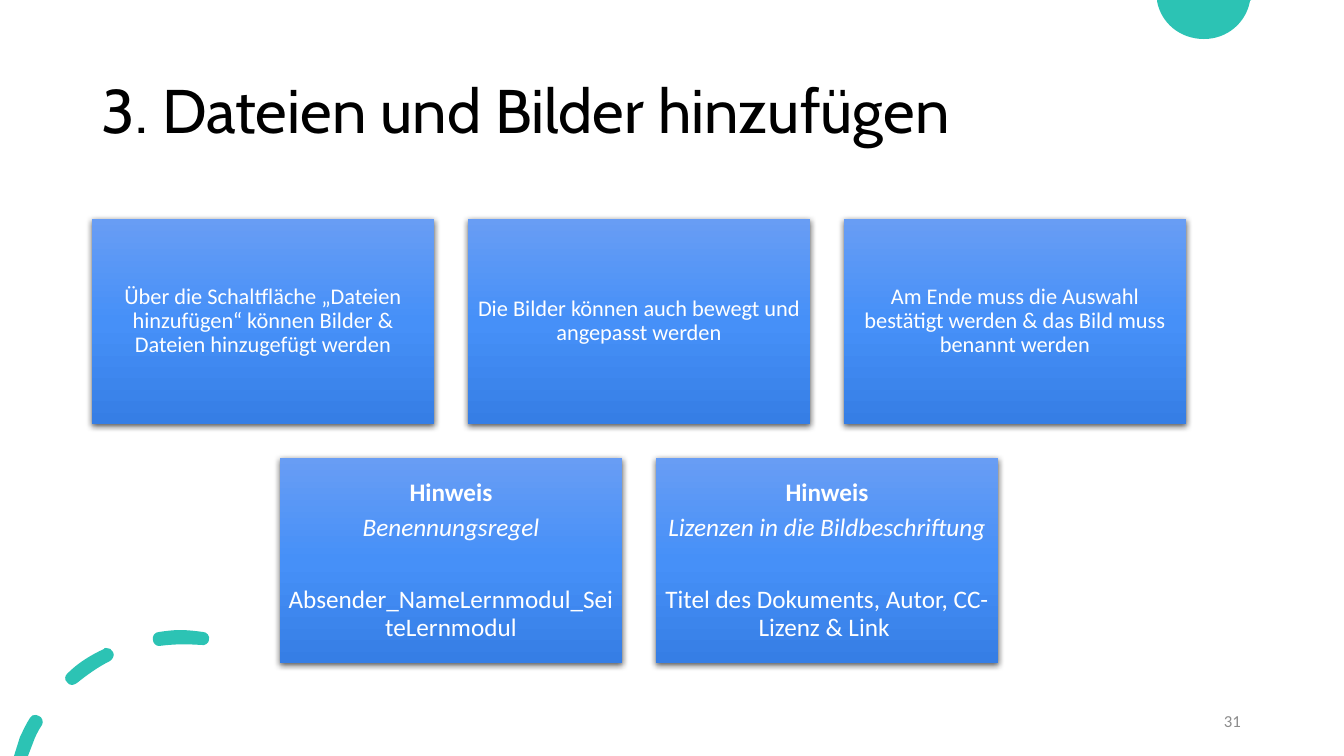
from dataclasses import dataclass

from pptx import Presentation
from pptx import util as u
from pptx.dml.color import RGBColor
from pptx.enum import shapes, text
from pptx.oxml import parse_xml
from pptx.oxml.ns import nsdecls, qn

PX = 12192000 / 1344


@dataclass(frozen=True)
class Theme:
    accent: str = "2CC3B4"
    card_gradient: tuple = ((0, "689DF4"), (50, "4690F8"), (100, "367EE5"))
    shadow: str = "000000"
    title: str = "000000"
    card_text: str = "FFFFFF"
    number: str = "8C8C8C"
    heading_font: str = "Cabin"
    body_font: str = "Calibri"
    title_size: int = 44
    hint_size: int = 18
    step_size: int = 16
    number_size: int = 12


THEME = Theme()

CARD_W, CARD_H, CARD_GAP = 342, 205, 34
CARDS_LEFT, CARDS_TOP = 92, 219

STEPS = [
    "Über die Schaltfläche „Dateien hinzufügen“ können Bilder & Dateien hinzugefügt werden",
    "Die Bilder können auch bewegt und angepasst werden",
    "Am Ende muss die Auswahl bestätigt werden & das Bild muss benannt werden",
]
HINTS = [
    ("Benennungsregel", "Absender_NameLernmodul_SeiteLernmodul"),
    ("Lizenzen in die Bildbeschriftung", "Titel des Dokuments, Autor, CC- Lizenz & Link "),
]

HALF_DISC = [[
    (1157, 0), (1251, 0), (1250, 1),
    (1246, 23, 1227, 39, 1204, 39), (1180, 39, 1161, 23, 1157, 1),
]]
ARC_DASHES = [
    [
        (36, 715), (34, 714, 31, 716, 30, 718), (26, 724, 23, 731, 20, 737),
        (14, 756), (28, 756), (33, 743), (35, 737, 38, 731, 42, 725),
        (44, 722, 42, 717, 39, 716), (38, 715, 37, 715, 36, 715),
    ],
    [
        (106, 648), (105, 648, 104, 648, 104, 649), (91, 655, 78, 663, 68, 673),
        (65, 675, 64, 680, 67, 682), (68, 684, 70, 685, 72, 685),
        (74, 685, 75, 684, 77, 683), (87, 675, 98, 667, 110, 661),
        (113, 659, 115, 655, 113, 652), (112, 649, 109, 648, 106, 648),
    ],
    [
        (180, 630), (173, 630, 166, 631, 159, 632), (155, 632, 152, 636, 153, 640),
        (153, 643, 156, 646, 159, 646), (174, 644, 187, 644, 201, 645),
        (205, 646, 209, 643, 209, 640), (210, 636, 207, 632, 203, 632),
        (196, 631, 187, 630, 180, 630),
    ],
]


def px(length):
    return u.Emu(round(length * PX))


def bend_segments(ornament, outlines):
    steps = [step for outline in outlines for step in outline[1:]]
    segments = list(ornament._element.iter(qn("a:lnTo")))
    for segment, step in zip(segments, steps):
        if len(step) == 2:
            continue
        points = "".join(f'<a:pt x="{px(x) - ornament.left}" y="{px(y) - ornament.top}"/>'
                         for x, y in zip(step[::2], step[1::2]))
        curve = parse_xml(f'<a:cubicBezTo {nsdecls("a")}>{points}</a:cubicBezTo>')
        segment.getparent().replace(segment, curve)


def add_ornament(slide, outlines):
    contours = [[(px(step[-2]), px(step[-1])) for step in outline] for outline in outlines]
    builder = slide.shapes.build_freeform(*contours[0][0])
    for index, contour in enumerate(contours):
        if index:
            builder.move_to(*contour[0])
        builder.add_line_segments(contour[1:], close=True)
    ornament = builder.convert_to_shape()
    bend_segments(ornament, outlines)
    ornament.shadow.inherit = False
    ornament.fill.solid()
    ornament.fill.fore_color.rgb = RGBColor.from_string(THEME.accent)
    ornament.line.fill.background()


def write(paragraph, words, *, size, color, font=THEME.body_font, bold=False, italic=False,
          align=text.PP_ALIGN.LEFT, line_spacing=0.9, after=0):
    paragraph.alignment = align
    paragraph.line_spacing = line_spacing
    paragraph.space_after = u.Pt(after)
    run = paragraph.add_run()
    run.text = words
    run.font.name = font
    run.font.size = u.Pt(size)
    run.font.bold = bold
    run.font.italic = italic
    run.font.color.rgb = RGBColor.from_string(color)


def prepare_frame(shape, inset):
    frame = shape.text_frame
    frame.word_wrap = True
    frame.vertical_anchor = text.MSO_ANCHOR.MIDDLE
    frame.margin_left = frame.margin_right = px(inset)
    frame.margin_top = frame.margin_bottom = px(inset)
    return frame


def add_label(slide, left, top, width, height, words, **style):
    label = slide.shapes.add_textbox(px(left), px(top), px(width), px(height))
    write(prepare_frame(label, 10).paragraphs[0], words, **style)


def add_card(slide, left, top, lines, inset):
    card = slide.shapes.add_shape(shapes.MSO_SHAPE.RECTANGLE,
                                  px(left), px(top), px(CARD_W), px(CARD_H))
    card.line.fill.background()
    stops = "".join(f'<a:gs pos="{share * 1000}"><a:srgbClr val="{color}"/></a:gs>'
                    for share, color in THEME.card_gradient)
    outline = card._element.spPr.find(qn("a:ln"))
    outline.addprevious(parse_xml(
        f'<a:gradFill {nsdecls("a")} rotWithShape="1"><a:gsLst>{stops}</a:gsLst>'
        '<a:lin ang="5400000" scaled="0"/></a:gradFill>'))
    outline.addnext(parse_xml(
        f'<a:effectLst {nsdecls("a")}><a:outerShdw blurRad="{u.Pt(4.5)}" dist="{u.Pt(1.5)}" '
        f'dir="5400000" algn="ctr" rotWithShape="0"><a:srgbClr val="{THEME.shadow}">'
        '<a:alpha val="63000"/></a:srgbClr></a:outerShdw></a:effectLst>'))
    frame = prepare_frame(card, inset)
    for index, (words, style) in enumerate(lines):
        paragraph = frame.add_paragraph() if index else frame.paragraphs[0]
        write(paragraph, words, color=THEME.card_text, align=text.PP_ALIGN.CENTER, **style)


def add_card_row(slide, left, top, cards, inset):
    for column, lines in enumerate(cards):
        add_card(slide, left + column * (CARD_W + CARD_GAP), top, lines, inset)


def hint_lines(topic, rule):
    size = THEME.hint_size
    return [
        ("Hinweis", dict(size=size, bold=True, after=6)),
        (topic, dict(size=size, italic=True, after=32)),
        (rule, dict(size=size)),
    ]


def main():
    deck = Presentation()
    deck.slide_width, deck.slide_height = px(1344), px(756)
    slide = deck.slides.add_slide(deck.slide_layouts[6])

    add_ornament(slide, HALF_DISC)
    add_ornament(slide, ARC_DASHES)
    add_label(slide, 92, 41, 1159, 146, "3. Dateien und Bilder hinzufügen",
              size=THEME.title_size, color=THEME.title, font=THEME.heading_font)
    add_card_row(slide, CARDS_LEFT, CARDS_TOP,
                 [[(step, dict(size=THEME.step_size))] for step in STEPS], inset=7)
    add_card_row(slide, CARDS_LEFT + (CARD_W + CARD_GAP) // 2, CARDS_TOP + CARD_H + CARD_GAP,
                 [hint_lines(*hint) for hint in HINTS], inset=5)
    add_label(slide, 949, 701, 302, 40, "31", size=THEME.number_size, color=THEME.number,
              align=text.PP_ALIGN.RIGHT, line_spacing=1.0)

    deck.save("out.pptx")


if __name__ == "__main__":
    main()
